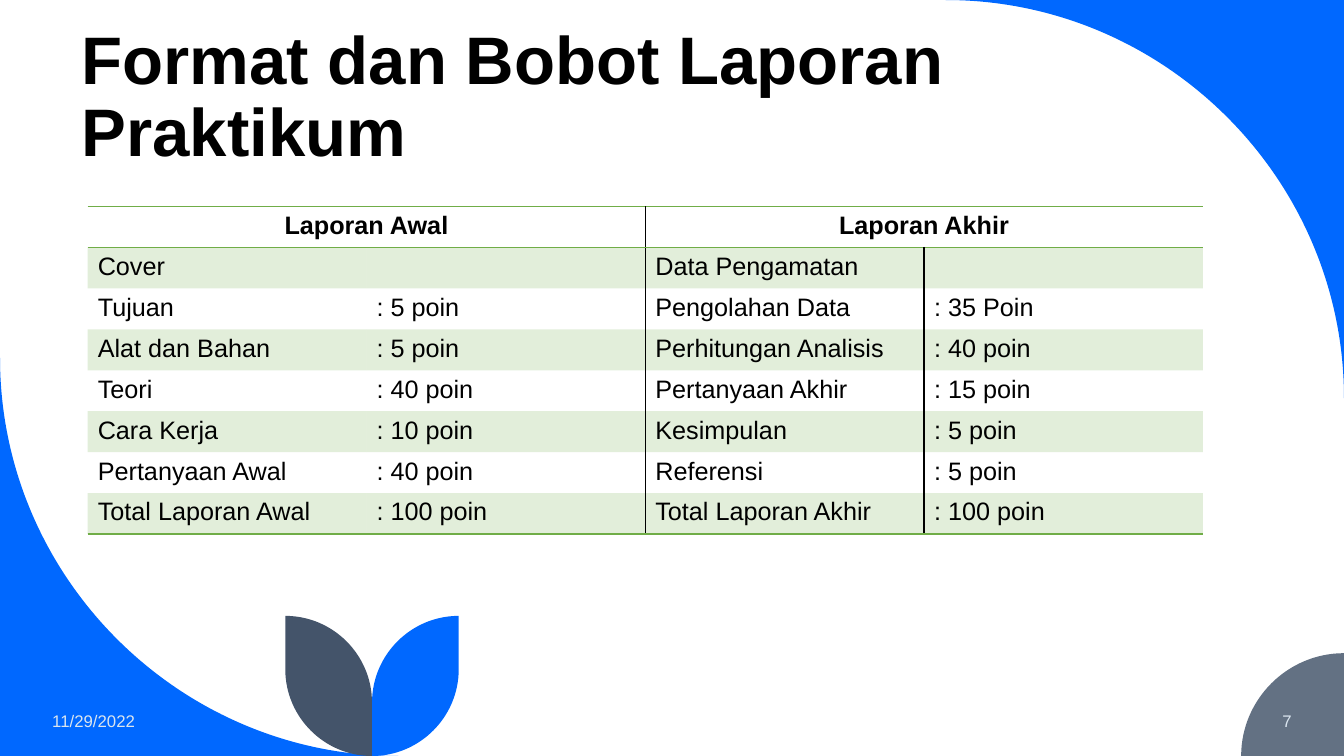
from lxml import etree
from pptx import Presentation
from pptx.dml.color import RGBColor
from pptx.enum.text import MSO_ANCHOR, PP_ALIGN
from pptx.oxml.ns import qn
from pptx.util import Inches, Pt

WIDTH, HEIGHT = 13.33, 7.5
FONT = "Arial"
BLUE = RGBColor(0x00, 0x68, 0xFF)
GRAY = RGBColor(0x63, 0x71, 0x83)
SLATE = RGBColor(0x44, 0x54, 0x6A)
PALE = RGBColor(0xDA, 0xE5, 0xEF)
BLACK = RGBColor(0x00, 0x00, 0x00)
GREEN = RGBColor(0x70, 0xAD, 0x47)
BAND_ALPHA = "20000"
NO_GRID_STYLE = "{2D5ABB26-0587-4C30-8999-92F81FD0307C}"
ROUNDNESS = 0.55  # Bezier handle length of a quarter circle, per radius
LEFT, CENTER, RIGHT = PP_ALIGN.LEFT, PP_ALIGN.CENTER, PP_ALIGN.RIGHT
MIDDLE, BOTTOM = MSO_ANCHOR.MIDDLE, MSO_ANCHOR.BOTTOM

ROWS = [
    ["Laporan Awal", "", "Laporan Akhir", ""],
    ["Cover", "", "Data Pengamatan", ""],
    ["Tujuan", ": 5 poin", "Pengolahan Data", ": 35 Poin"],
    ["Alat dan Bahan", ": 5 poin", "Perhitungan Analisis", ": 40 poin"],
    ["Teori", ": 40 poin", "Pertanyaan Akhir", ": 15 poin"],
    ["Cara Kerja", ": 10 poin", "Kesimpulan", ": 5 poin"],
    ["Pertanyaan Awal", ": 40 poin", "Referensi", ": 5 poin"],
    ["Total Laporan Awal", ": 100 poin", "Total Laporan Akhir", ": 100 poin"],
]


def quarter(start, end, corner):
    """Handles and end of a quarter circle whose tangents meet at corner."""
    def handle(point):
        return tuple(p + (c - p) * ROUNDNESS for p, c in zip(point, corner))
    return [handle(start), handle(end), end]


def add_outline(slide, start, segments, color):
    """Draw segments: one point makes a line, three points make a curve."""
    points = [(Inches(x), Inches(y)) for segment in segments for x, y in segment]
    builder = slide.shapes.build_freeform(Inches(start[0]), Inches(start[1]))
    builder.add_line_segments(points, close=True)
    shape = builder.convert_to_shape()
    shape.shadow.inherit = False
    shape.fill.solid()
    shape.fill.fore_color.rgb = color
    shape.line.fill.background()

    lines = list(shape.element.iter(qn("a:lnTo")))
    for segment in segments:
        group, lines = lines[:len(segment)], lines[len(segment):]
        if len(group) == 3:
            curve = etree.Element(qn("a:cubicBezTo"))
            group[0].addprevious(curve)
            for line in group:
                curve.append(line[0])
                line.getparent().remove(line)


def add_corner(slide, start, end, tangent_corner, slide_corner, color):
    segments = [quarter(start, end, tangent_corner), [slide_corner]]
    add_outline(slide, start, segments, color)


def add_corners(slide, large=3.95, small=1.02):
    add_corner(slide, (WIDTH, large), (WIDTH - large, 0),
               (WIDTH, 0 + 0), (WIDTH, 0), BLUE)
    add_corner(slide, (0, HEIGHT - large), (large, HEIGHT),
               (0, HEIGHT), (0, HEIGHT), BLUE)
    add_corner(slide, (WIDTH, HEIGHT - small), (WIDTH - small, HEIGHT),
               (WIDTH - small, HEIGHT - small), (WIDTH, HEIGHT), GRAY)


def add_leaves(slide, stem, top, width):
    for tip, color in ((stem + width, BLUE), (stem - width, SLATE)):
        shoulder, foot = (tip, HEIGHT - width), (stem, HEIGHT)
        neck, point = (stem, top + width), (tip, top)
        segments = [
            [shoulder],
            quarter(shoulder, foot, (tip, HEIGHT)),
            [neck],
            quarter(neck, point, (stem, top)),
        ]
        add_outline(slide, point, segments, color)


def format_paragraph(paragraph, size, color, bold=False, align=LEFT):
    paragraph.alignment = align
    paragraph.font.name = FONT
    paragraph.font.size = Pt(size)
    paragraph.font.bold = bold
    paragraph.font.color.rgb = color


def add_title(slide, text, box):
    title = slide.shapes.title
    title.left, title.top, title.width, title.height = map(Inches, box)
    frame = title.text_frame
    frame.text = text
    frame.word_wrap = True
    frame.vertical_anchor = BOTTOM
    frame.paragraphs[0].line_spacing = 0.9
    format_paragraph(frame.paragraphs[0], 48, BLACK, bold=True)


def add_footer(slide, text, box, align):
    frame = slide.shapes.add_textbox(*map(Inches, box)).text_frame
    frame.text = text
    frame.word_wrap = True
    frame.vertical_anchor = MIDDLE
    format_paragraph(frame.paragraphs[0], 12, PALE, align=align)


def cell_borders(row, column, last_row):
    """Border colours by side, in the order that the schema wants."""
    borders = {}
    if column == 2 or (column == 3 and row > 0):
        borders["L"] = BLACK
    if column == 1 or (column == 2 and row > 0) or (column == 0 and row == 0):
        borders["R"] = BLACK
    if row == 0:
        borders["T"] = GREEN
    if row in (0, last_row):
        borders["B"] = GREEN
    return borders


def set_borders(cell, borders):
    properties = cell._tc.get_or_add_tcPr()
    for side, color in borders.items():
        line = etree.SubElement(properties, qn(f"a:ln{side}"), w=str(Pt(1)))
        fill = etree.SubElement(line, qn("a:solidFill"))
        etree.SubElement(fill, qn("a:srgbClr"), val=str(color))


def fill_cell(cell, banded):
    if not banded:
        cell.fill.background()
        return
    cell.fill.solid()
    cell.fill.fore_color.rgb = GREEN
    color = cell._tc.tcPr.find(qn("a:solidFill"))[0]
    etree.SubElement(color, qn("a:alpha"), val=BAND_ALPHA)


def add_score_table(slide, left, top, width, height):
    row_count, column_count = len(ROWS), len(ROWS[0])
    table = slide.shapes.add_table(
        row_count, column_count, Inches(left), Inches(top),
        Inches(width), Inches(height)).table
    table.first_row = table.horz_banding = False
    table._tbl.tblPr.find(qn("a:tableStyleId")).text = NO_GRID_STYLE

    # Each header spans a label column and its score column
    for column in range(0, column_count, 2):
        table.cell(0, column).merge(table.cell(0, column + 1))

    for row, texts in enumerate(ROWS):
        for column, text in enumerate(texts):
            cell = table.cell(row, column)
            if cell.is_spanned:
                continue
            cell.text = text
            header = row == 0
            format_paragraph(cell.text_frame.paragraphs[0], 18, BLACK,
                             bold=header, align=CENTER if header else LEFT)
            set_borders(cell, cell_borders(row, column, row_count - 1))
            fill_cell(cell, banded=row % 2 == 1)


def main():
    presentation = Presentation()
    presentation.slide_width = Inches(WIDTH)
    presentation.slide_height = Inches(HEIGHT)
    slide = presentation.slides.add_slide(presentation.slide_layouts[5])

    # Decoration
    add_corners(slide)
    add_leaves(slide, stem=3.69, top=6.11, width=0.86)

    # Content
    add_title(slide, "Format dan Bobot Laporan Praktikum", (0.71, 0.3, 11.48, 1.45))
    add_score_table(slide, left=0.87, top=2.05, width=11.06, height=3.25)

    # Footer
    add_footer(slide, "11/29/2022", (0.42, 6.95, 1.93, 0.4), LEFT)
    add_footer(slide, "7", (11.1, 6.95, 1.81, 0.4), RIGHT)

    presentation.save("out.pptx")


if __name__ == "__main__":
    main()
